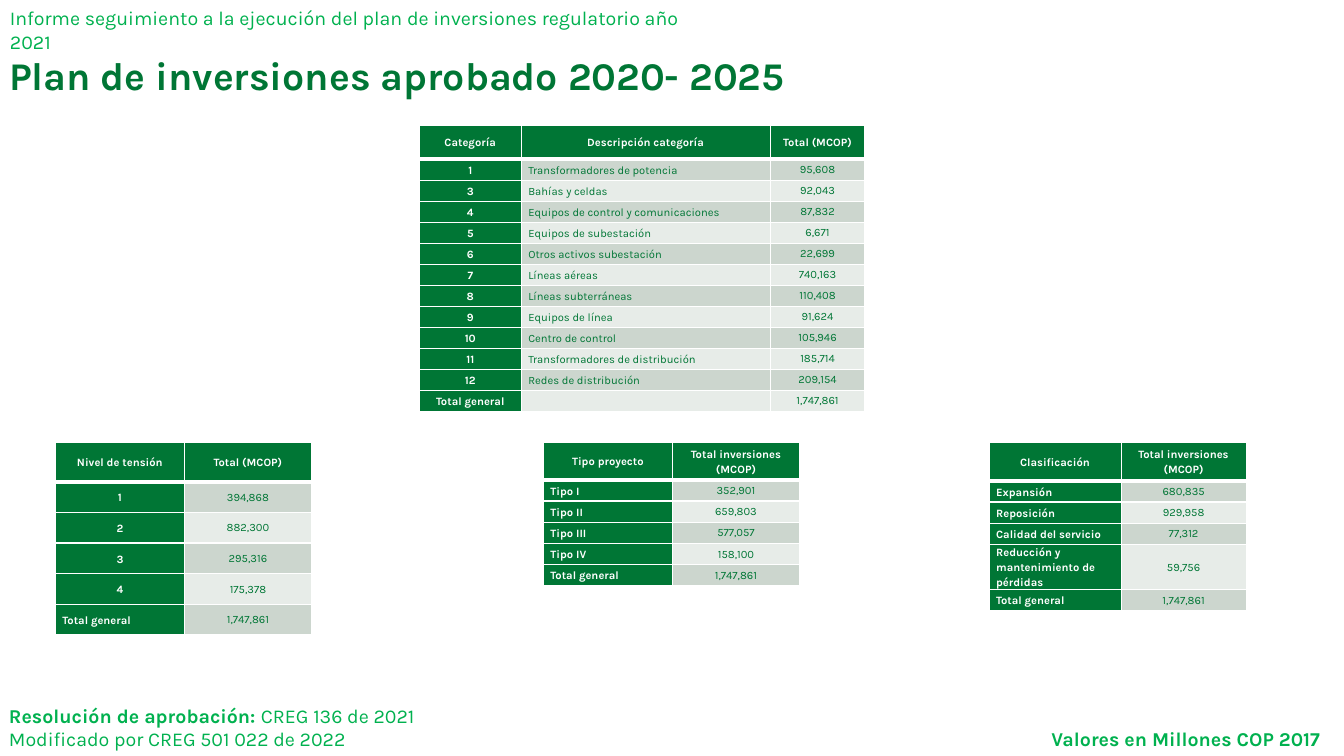
"""Builds the slide of approved investment plan tables for 2020-2025."""
from dataclasses import dataclass
from typing import Any

from lxml.etree import SubElement
from pptx import Presentation
from pptx.dml.color import RGBColor
from pptx.enum.text import MSO_ANCHOR, MSO_AUTO_SIZE, PP_ALIGN
from pptx.oxml.ns import qn
from pptx.util import Inches, Pt


@dataclass(frozen=True)
class Theme:
    """Colours, font and type sizes of the slide."""
    font: str = "Karla"
    dark: str = "007635"
    bright: str = "00B14F"
    white: str = "FFFFFF"
    bands: tuple[str, str] = ("CCD6CE", "E7ECE8")
    title_size: int = 28
    note_size: int = 14
    table_size: int = 8
    thin_line: int = 1
    thick_line: int = 3


@dataclass(frozen=True)
class Span:
    """A stretch of text in one weight."""
    text: str
    bold: bool = False


@dataclass(frozen=True)
class Note:
    """A free text box made of lines of spans."""
    area: tuple[float, float, float, float]
    lines: tuple[tuple[Span, ...], ...]


@dataclass(frozen=True)
class InvestmentTable:
    """A table with a header row, label column and amount column."""
    left: float
    top: float
    columns: tuple[float, ...]
    heights: tuple[float, ...]
    rows: tuple[tuple[str, ...], ...]
    total_align: PP_ALIGN = PP_ALIGN.LEFT


THEME = Theme()
TOTAL = "Total general"
GRAND_TOTAL = "1,747,861"

TITLE = Note((-0.01, 0.51, 8.48, 0.71), ((Span("Plan de inversiones aprobado 2020- 2025", True),),))
APPROVAL = Note((-0.01, 6.93, 4.27, 0.57), (
    (Span("Resolución de aprobación: ", True), Span("CREG 136 de 2021")),
    (Span("Modificado por CREG 501 022 de 2022"),),
))
REPORT = Note((0, 0.01, 7.27, 0.34), (
    (Span("Informe seguimiento a la ejecución del plan de inversiones regulatorio año 2021"),),
))
UNITS = Note((10.33, 7.16, 2.9, 0.34), ((Span("Valores en Millones COP 2017", True),),))

TABLES = (
    InvestmentTable(5.39, 4.39, (1.28, 1.26), (0.37,) + (0.21,) * 5, (
        ("Tipo proyecto", "Total inversiones (MCOP)"),
        ("Tipo I", "352,901"),
        ("Tipo II", "659,803"),
        ("Tipo III", "577,057"),
        ("Tipo IV", "158,100"),
        (TOTAL, GRAND_TOTAL),
    )),
    InvestmentTable(0.55, 4.39, (1.28, 1.26), (0.39,) + (1.52 / 5,) * 5, (
        ("Nivel de tensión", "Total (MCOP)"),
        ("1", "394,868"),
        ("2", "882,300"),
        ("3", "295,316"),
        ("4", "175,378"),
        (TOTAL, GRAND_TOTAL),
    )),
    InvestmentTable(9.81, 4.39, (1.31, 1.24), (0.38, 0.21, 0.21, 0.21, 0.45, 0.21), (
        ("Clasificación", "Total inversiones (MCOP)"),
        ("Expansión", "680,835"),
        ("Reposición", "929,958"),
        ("Calidad del servicio", "77,312"),
        ("Reducción y mantenimiento de pérdidas", "59,756"),
        (TOTAL, GRAND_TOTAL),
    )),
    InvestmentTable(4.16, 1.24, (1.01, 2.47, 0.94), (0.34,) + (2.5 / 12,) * 12, (
        ("Categoría", "Descripción categoría", "Total (MCOP)"),
        ("1", "Transformadores de potencia", "95,608"),
        ("3", "Bahías y celdas", "92,043"),
        ("4", "Equipos de control y comunicaciones", "87,832"),
        ("5", "Equipos de subestación", "6,671"),
        ("6", "Otros activos subestación", "22,699"),
        ("7", "Líneas aéreas", "740,163"),
        ("8", "Líneas subterráneas", "110,408"),
        ("9", "Equipos de línea", "91,624"),
        ("10", "Centro de control", "105,946"),
        ("11", "Transformadores de distribución", "185,714"),
        ("12", "Redes de distribución", "209,154"),
        (TOTAL, "", GRAND_TOTAL),
    ), PP_ALIGN.CENTER),
)


def apply(target: Any, values: dict[str, Any]) -> None:
    """Set every named attribute on the target."""
    for name, value in values.items():
        setattr(target, name, value)


def add_span(para: Any, span: Span, size: int, color: str) -> None:
    """Append a formatted run to a paragraph."""
    run = para.add_run()
    run.text = span.text
    apply(run.font, {"name": THEME.font, "size": Pt(size), "bold": span.bold})
    run.font.color.rgb = RGBColor.from_string(color)


def fill_box(box: Any, note: Note, size: int, color: str, spacing: float = 1.0) -> None:
    """Place a text shape and write the lines of a note into it."""
    apply(box, dict(zip(("left", "top", "width", "height"), map(Inches, note.area))))
    frame = box.text_frame
    apply(frame, {"word_wrap": True, "auto_size": MSO_AUTO_SIZE.NONE,
                  "vertical_anchor": MSO_ANCHOR.TOP})
    for index, line in enumerate(note.lines):
        para = frame.add_paragraph() if index else frame.paragraphs[0]
        apply(para, {"alignment": PP_ALIGN.LEFT, "line_spacing": spacing})
        for span in line:
            add_span(para, span, size, color)


def add_note(page: Any, note: Note) -> None:
    """Add a bright green text box."""
    box = page.shapes.add_textbox(*map(Inches, note.area))
    fill_box(box, note, THEME.note_size, THEME.bright)


def set_borders(cell: Any, row: int) -> None:
    """Draw white cell borders, thicker under the header."""
    properties = cell._tc.get_or_add_tcPr()
    thick_side = {0: "lnB", 1: "lnT"}.get(row)
    for side in ("lnL", "lnR", "lnT", "lnB"):
        points = THEME.thick_line if side == thick_side else THEME.thin_line
        line = SubElement(properties, qn(f"a:{side}"), w=str(Pt(points)))
        SubElement(SubElement(line, qn("a:solidFill")), qn("a:srgbClr"), val=THEME.white)


def format_cell(cell: Any, text: str, row: int, column: int, table: InvestmentTable) -> None:
    """Write and style one table cell by its role."""
    is_heading = row == 0 or column == 0
    is_amount = row > 0 and column == len(table.columns) - 1
    centred = row == 0 or is_amount or text.isdigit()
    align = PP_ALIGN.CENTER if centred else PP_ALIGN.LEFT
    side = Inches(0.01 if is_amount else 0.07)
    apply(cell, {"margin_left": side, "margin_right": side, "margin_bottom": 0,
                 "margin_top": Inches(0.01 if is_amount else 0),
                 "vertical_anchor": MSO_ANCHOR.MIDDLE})
    set_borders(cell, row)
    cell.fill.solid()
    fill = THEME.dark if is_heading else THEME.bands[(row - 1) % 2]
    cell.fill.fore_color.rgb = RGBColor.from_string(fill)
    para = cell.text_frame.paragraphs[0]
    apply(para, {"alignment": table.total_align if text == TOTAL else align,
                 "line_spacing": 1.0 if is_amount else 1.15})
    if text:
        color = THEME.white if is_heading else THEME.dark
        add_span(para, Span(text, is_heading), THEME.table_size, color)
    else:
        SubElement(para._p, qn("a:endParaRPr"), sz=str(THEME.table_size * 100))


def add_investment_table(page: Any, table: InvestmentTable) -> None:
    """Add one investment table."""
    frame = page.shapes.add_table(
        len(table.rows), len(table.columns), Inches(table.left), Inches(table.top),
        Inches(sum(table.columns)), Inches(sum(table.heights)))
    grid = frame.table
    grid.horz_banding = False
    for column, width in zip(grid.columns, table.columns):
        column.width = Inches(width)
    for row, (values, height) in enumerate(zip(table.rows, table.heights)):
        grid.rows[row].height = Inches(height)
        for column, text in enumerate(values):
            format_cell(grid.cell(row, column), text, row, column, table)


def main() -> None:
    """Build and save the deck."""
    deck = Presentation()
    apply(deck, {"slide_width": Inches(13.33), "slide_height": Inches(7.5)})
    page = deck.slides.add_slide(deck.slide_layouts[5])
    fill_box(page.shapes.title, TITLE, THEME.title_size, THEME.dark, 0.9)
    for note in (APPROVAL, REPORT):
        add_note(page, note)
    for table in TABLES:
        add_investment_table(page, table)
    add_note(page, UNITS)
    deck.save("out.pptx")


if __name__ == "__main__":
    main()
